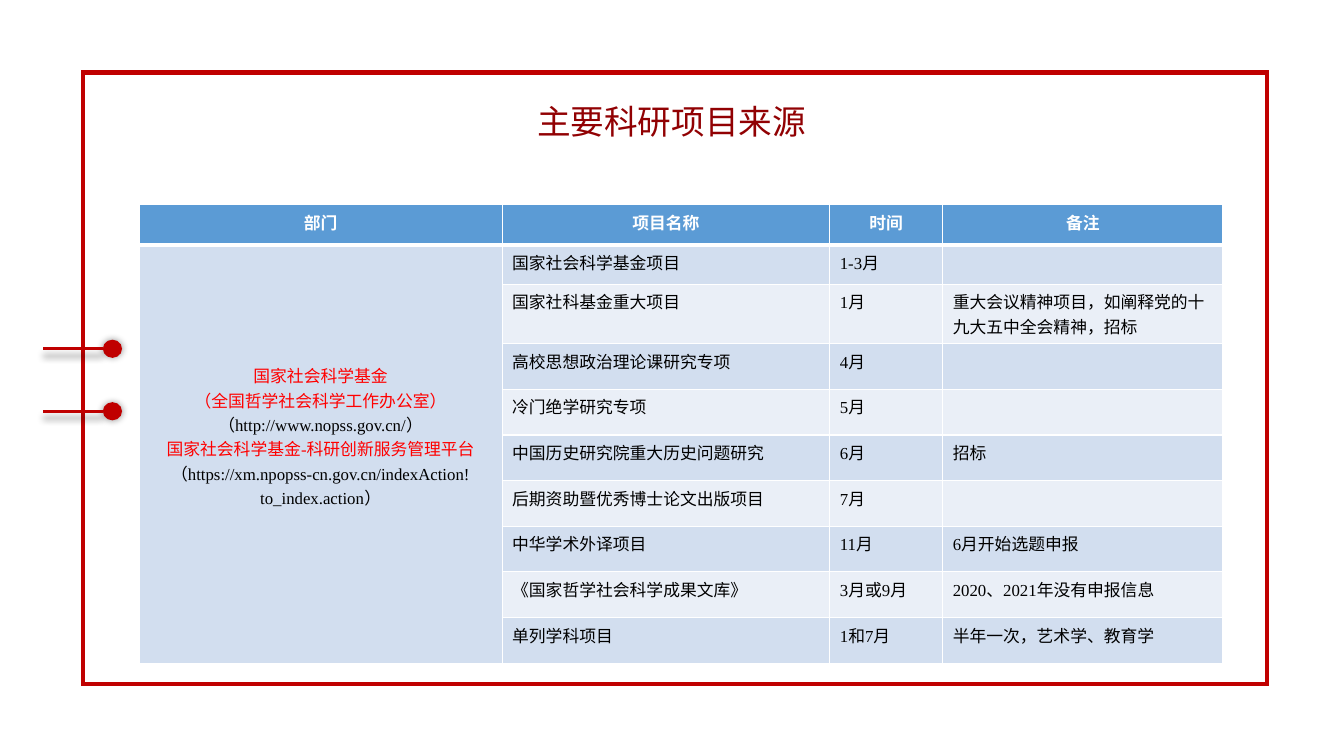
from lxml import etree
from pptx import Presentation
from pptx.dml.color import RGBColor
from pptx.enum.shapes import MSO_CONNECTOR, MSO_SHAPE
from pptx.enum.text import MSO_ANCHOR, PP_ALIGN
from pptx.oxml import parse_xml
from pptx.oxml.ns import nsdecls, qn
from pptx.util import Inches, Pt

DEEP_RED = RGBColor(0xC0, 0x00, 0x00)
TITLE_RED = RGBColor(0x91, 0x01, 0x03)
BRIGHT_RED = RGBColor(0xFF, 0x00, 0x00)
BLACK = RGBColor(0x00, 0x00, 0x00)
WHITE = RGBColor(0xFF, 0xFF, 0xFF)
HEADER_BLUE = RGBColor(0x5B, 0x9B, 0xD5)
BANDS = [RGBColor(0xEA, 0xEF, 0xF7), RGBColor(0xD2, 0xDE, 0xEF)]
HAN_FONT = "Noto Sans CJK SC"
LATIN_FONT = "Times New Roman"


def style_run(run, size, color, latin=LATIN_FONT, bold=False):
    font = run.font
    font.size, font.bold, font.name = Pt(size), bold, latin
    font.color.rgb = color
    east_asian = etree.SubElement(font._element, qn("a:ea"))
    east_asian.set("typeface", HAN_FONT)


def add_soft_shadow(shape, drop):
    """Blurred 40 % black shadow, lowered by drop points."""
    shape._element.spPr.append(parse_xml(
        f'<a:effectLst {nsdecls("a")}>'
        f'<a:outerShdw blurRad="{Pt(5)}" dist="{Pt(drop)}" dir="5400000">'
        '<a:srgbClr val="000000"><a:alpha val="40000"/></a:srgbClr>'
        '</a:outerShdw></a:effectLst>'))


prs = Presentation()
prs.slide_width, prs.slide_height = Inches(13.33), Inches(7.5)
slide = prs.slides.add_slide(prs.slide_layouts[6])
shapes = slide.shapes

# Frame with two pins on its left edge
frame = shapes.add_shape(MSO_SHAPE.RECTANGLE, Inches(0.82), Inches(0.72),
                         Inches(11.75), Inches(6.07))
frame.shadow.inherit = False
frame.fill.background()
frame.line.color.rgb = DEEP_RED
frame.line.width = Pt(3)
corners = etree.SubElement(frame._element.spPr.find(qn("a:ln")), qn("a:miter"))
corners.set("lim", "800000")

PIN_LEFT, HEAD_LEFT, HEAD_WIDTH, HEAD_HEIGHT = 0.43, 1.02, 0.19, 0.18
for pin_y in (3.46, 4.08):
    head = shapes.add_shape(MSO_SHAPE.OVAL, Inches(HEAD_LEFT), Inches(pin_y - HEAD_HEIGHT / 2),
                            Inches(HEAD_WIDTH), Inches(HEAD_HEIGHT))
    head.fill.solid()
    head.fill.fore_color.rgb = DEEP_RED
    head.line.fill.background()
    needle = shapes.add_connector(MSO_CONNECTOR.STRAIGHT, Inches(HEAD_LEFT), Inches(pin_y),
                                  Inches(PIN_LEFT), Inches(pin_y))
    needle.line.color.rgb = DEEP_RED
    needle.line.width = Pt(2.25)
    add_soft_shadow(head, 0)
    add_soft_shadow(needle, 5)

# Title
title = shapes.add_textbox(Inches(2.35), Inches(0.99), Inches(8.62), Inches(0.47)).text_frame
title.word_wrap = True
title.vertical_anchor = MSO_ANCHOR.MIDDLE
title.text = "主要科研项目来源"
heading = title.paragraphs[0]
heading.alignment = PP_ALIGN.CENTER
heading.line_spacing = 0.9
style_run(heading.runs[0], 24, TITLE_RED, HAN_FONT)

# Table of projects
HEADERS = ["部门", "项目名称", "时间", "备注"]
PROJECTS = [
    ("国家社会科学基金项目", "1-3月", ""),
    ("国家社科基金重大项目", "1月", "重大会议精神项目，如阐释党的十九大五中全会精神，招标"),
    ("高校思想政治理论课研究专项", "4月", ""),
    ("冷门绝学研究专项", "5月", ""),
    ("中国历史研究院重大历史问题研究", "6月", "招标"),
    ("后期资助暨优秀博士论文出版项目", "7月", ""),
    ("中华学术外译项目", "11月", "6月开始选题申报"),
    ("《国家哲学社会科学成果文库》", "3月或9月", "2020、2021年没有申报信息"),
    ("单列学科项目", "1和7月", "半年一次，艺术学、教育学"),
]
DEPARTMENT = [
    [("国家社会科学基金", BRIGHT_RED)],
    [("（全国哲学社会科学工作办公室）", BRIGHT_RED)],
    [("（http://www.nopss.gov.cn/）", BLACK)],
    [("国家社会科学基金-科研创新服务管理平台", BRIGHT_RED),
     ("（https://xm.npopss-cn.gov.cn/indexAction!to_index.action）", BLACK)],
]
COLUMN_WIDTHS = [3.6, 3.25, 1.12, 2.78]
TWO_LINE_HEIGHT = 0.59
ROW_HEIGHTS = [0.4, 0.39, TWO_LINE_HEIGHT] + [0.453] * 7

table = shapes.add_table(len(ROW_HEIGHTS), len(COLUMN_WIDTHS), Inches(1.38), Inches(2.03),
                         Inches(sum(COLUMN_WIDTHS)), Inches(sum(ROW_HEIGHTS))).table
for column, width in zip(table.columns, COLUMN_WIDTHS):
    column.width = Inches(width)
for row, height in zip(table.rows, ROW_HEIGHTS):
    row.height = Inches(height)

for r, values in enumerate([HEADERS] + [("",) + project for project in PROJECTS]):
    is_header = r == 0
    for c, value in enumerate(values):
        cell = table.cell(r, c)
        cell.fill.solid()
        cell.fill.fore_color.rgb = HEADER_BLUE if is_header else BANDS[r % 2]
        entry = cell.text_frame.paragraphs[0]
        entry.font.size = Pt(12)
        if is_header:
            entry.alignment = PP_ALIGN.CENTER
            cell._tc.get_or_add_tcPr().insert(0, parse_xml(
                f'<a:lnB {nsdecls("a")} w="{Pt(3)}"><a:solidFill>'
                f'<a:srgbClr val="{WHITE}"/></a:solidFill></a:lnB>'))
        if value:
            entry.text = value
            style_run(entry.runs[0], 12, WHITE if is_header else BLACK, bold=is_header)

department = table.cell(1, 0)
department.merge(table.cell(len(PROJECTS), 0))
department.vertical_anchor = MSO_ANCHOR.MIDDLE
department.margin_bottom = Inches(0.4)
department_text = department.text_frame
for i, pieces in enumerate(DEPARTMENT):
    line = department_text.add_paragraph() if i else department_text.paragraphs[0]
    line.alignment = PP_ALIGN.CENTER
    for wording, color in pieces:
        run = line.add_run()
        run.text = wording
        style_run(run, 12, color)

prs.save("out.pptx")
